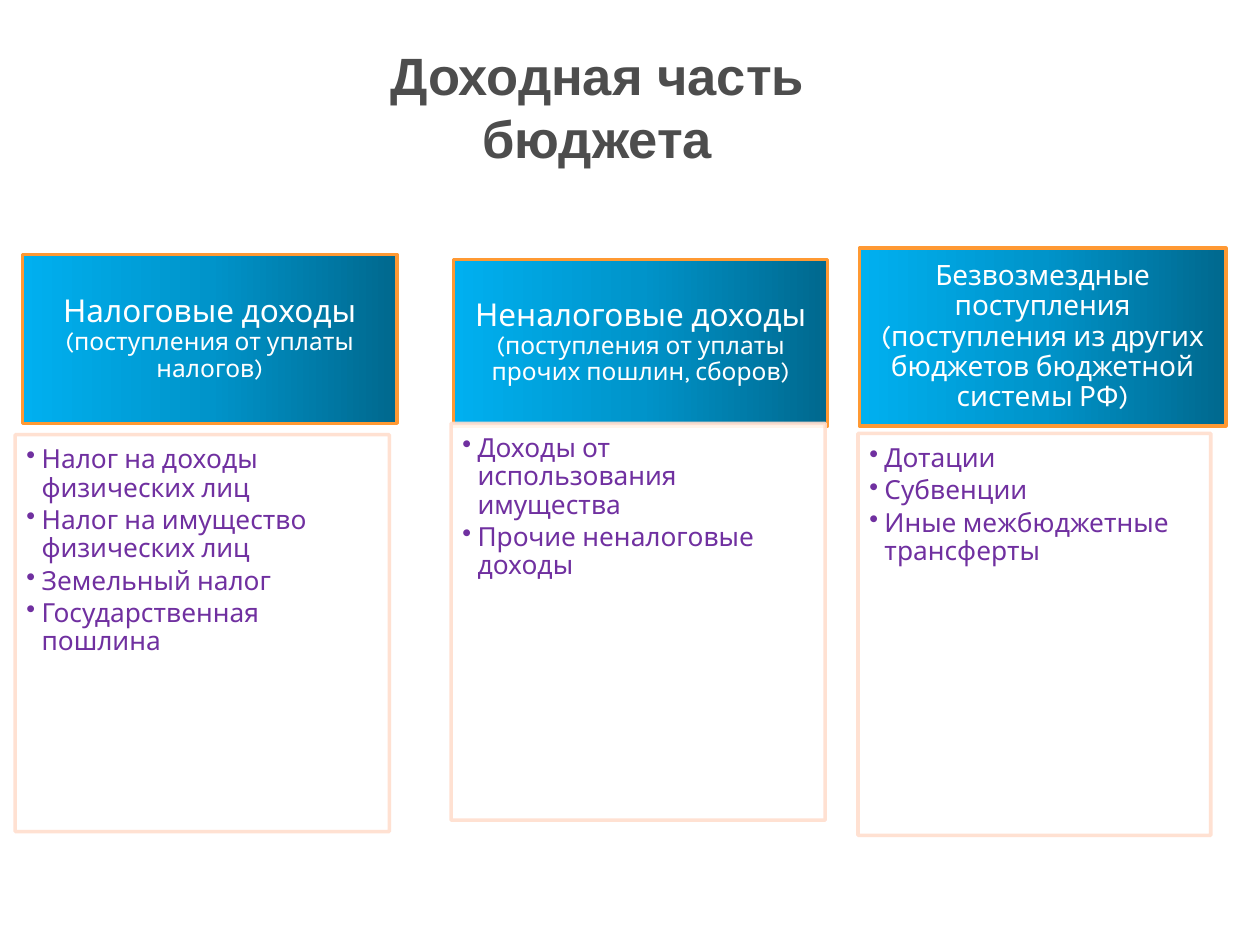
from copy import deepcopy

from lxml.etree import SubElement
from pptx import Presentation
from pptx.dml.color import RGBColor
from pptx.enum.shapes import MSO_SHAPE
from pptx.enum.text import MSO_ANCHOR, PP_ALIGN
from pptx.oxml.ns import qn
from pptx.util import Inches, Pt

WHITE = RGBColor(0xFF, 0xFF, 0xFF)
GREY = RGBColor(0x4D, 0x4D, 0x4D)
PURPLE = RGBColor(0x70, 0x30, 0xA0)
ORANGE = RGBColor(0xFF, 0x99, 0x33)
PEACH = RGBColor(0xFF, 0xDE, 0xCE)
GRADIENT = [
    (0, RGBColor(0x00, 0xB0, 0xF0)),
    (0.5, RGBColor(0x00, 0x94, 0xCA)),
    (1, RGBColor(0x00, 0x68, 0x8E)),
]
BODY_FONT = "Karla"
BULLET_INDENT = Inches(0.12)

# Each column: header box, header runs with sizes, list box, list items
COLUMNS = [
    (
        (0.18, 2.02, 2.97, 1.34),
        [("Налоговые доходы ", 18), ("(поступления от уплаты налогов)", 14)],
        (0.12, 3.45, 2.97, 3.15),
        ["Налог на доходы физических лиц", "Налог на имущество физических лиц",
         "Земельный налог", "Государственная пошлина"],
    ),
    (
        (3.6, 2.06, 2.97, 1.32),
        [("Неналоговые доходы ", 18),
         ("(поступления от уплаты прочих пошлин, сборов)", 14)],
        (3.58, 3.36, 2.97, 3.15),
        ["Доходы от использования имущества", "Прочие неналоговые доходы"],
    ),
    (
        (6.82, 1.97, 2.91, 1.41),
        [("Безвозмездные поступления (поступления из других бюджетов "
          "бюджетной системы РФ)", 16)],
        (6.81, 3.44, 2.8, 3.19),
        ["Дотации", "Субвенции", "Иные межбюджетные трансферты"],
    ),
]


def set_values(target, values):
    for name, value in values.items():
        setattr(target, name, value)


def set_frame(frame, anchor, margins):
    """Margins run left, top, right, bottom in inches."""
    sides = ("margin_left", "margin_top", "margin_right", "margin_bottom")
    set_values(frame, {"word_wrap": True, "vertical_anchor": anchor})
    set_values(frame, dict(zip(sides, map(Inches, margins))))


def add_run(paragraph, text, size, color, name=BODY_FONT, bold=False):
    run = paragraph.add_run()
    run.text = text
    set_values(run.font, {"size": Pt(size), "name": name, "bold": bold})
    run.font.color.rgb = color


def add_box(slide, box, line_color):
    shape = slide.shapes.add_shape(MSO_SHAPE.RECTANGLE, *map(Inches, box))
    shape.shadow.inherit = False
    shape.line.color.rgb = line_color
    shape.line.width = Pt(2)
    return shape


def fill_gradient(shape):
    shape.fill.gradient()
    shape.fill.gradient_angle = 0
    stop_list = shape._element.spPr.find(qn("a:gradFill")).find(qn("a:gsLst"))
    stop_list.append(deepcopy(stop_list[0]))
    for stop, (position, color) in zip(shape.fill.gradient_stops, GRADIENT):
        stop.position = position
        stop.color.rgb = color


def make_translucent(shape, percent):
    """Set the opacity of the fill and the line."""
    for color in shape._element.spPr.iter(qn("a:srgbClr")):
        SubElement(color, qn("a:alpha")).set("val", str(percent * 1000))


def add_bullet(paragraph):
    properties = paragraph._p.get_or_add_pPr()
    properties.set("marL", str(BULLET_INDENT))
    properties.set("indent", str(-BULLET_INDENT))
    SubElement(properties, qn("a:buChar")).set("char", "•")


def add_header(slide, box, runs):
    shape = add_box(slide, box, ORANGE)
    fill_gradient(shape)
    set_frame(shape.text_frame, MSO_ANCHOR.MIDDLE, (0.13, 0.08, 0.13, 0.08))
    paragraph = shape.text_frame.paragraphs[0]
    set_values(paragraph, {"alignment": PP_ALIGN.CENTER, "line_spacing": 0.9})
    for text, size in runs:
        add_run(paragraph, text, size, WHITE)


def add_list(slide, box, items):
    shape = add_box(slide, box, PEACH)
    shape.fill.solid()
    shape.fill.fore_color.rgb = WHITE
    make_translucent(shape, 90)
    frame = shape.text_frame
    set_frame(frame, MSO_ANCHOR.TOP, (0.09, 0.09, 0.12, 0.13))
    for index, item in enumerate(items):
        paragraph = frame.add_paragraph() if index else frame.paragraphs[0]
        add_bullet(paragraph)
        set_values(paragraph, {"alignment": PP_ALIGN.LEFT, "line_spacing": 0.9,
                               "space_after": Pt(2.25)})
        add_run(paragraph, item, 15, PURPLE)


def add_title(slide, box, text):
    frame = slide.shapes.add_textbox(*map(Inches, box)).text_frame
    set_frame(frame, MSO_ANCHOR.TOP, (0.1, 0.05, 0.1, 0.05))
    paragraph = frame.paragraphs[0]
    paragraph.alignment = PP_ALIGN.CENTER
    add_run(paragraph, text, 30, GREY, name="Arial", bold=True)


def main():
    presentation = Presentation()
    set_values(presentation, {"slide_width": Inches(10), "slide_height": Inches(7.5)})
    slide = presentation.slides.add_slide(presentation.slide_layouts[6])
    for header_box, runs, list_box, items in COLUMNS:
        add_header(slide, header_box, runs)
        add_list(slide, list_box, items)
    add_title(slide, (2.24, 0.29, 5, 1.11), "Доходная часть бюджета")
    presentation.save("out.pptx")


if __name__ == "__main__":
    main()
